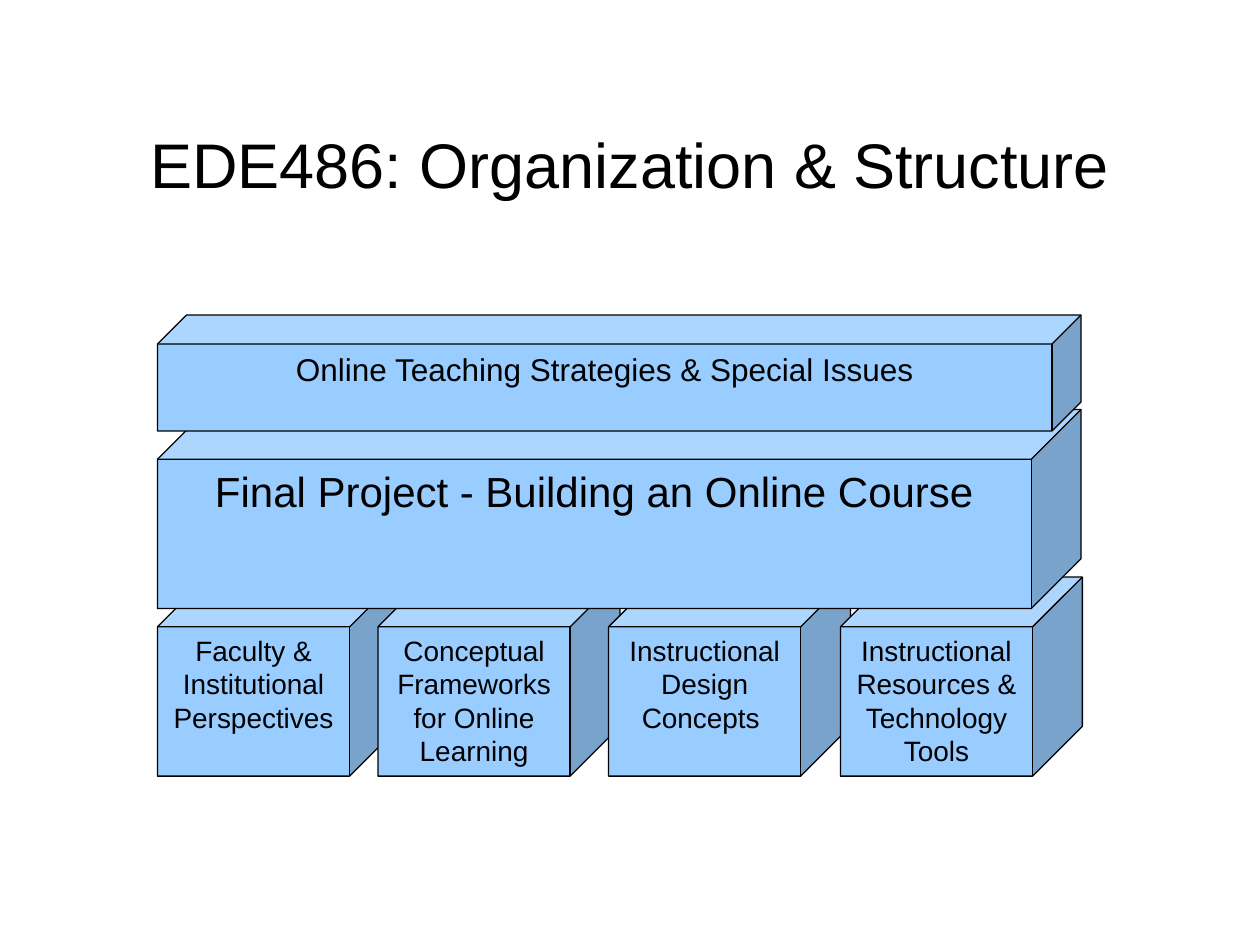
from pptx import Presentation
from pptx.dml.color import RGBColor
from pptx.enum.shapes import MSO_SHAPE as SHAPE
from pptx.enum.text import MSO_ANCHOR as ANCHOR, PP_ALIGN as ALIGN
from pptx.util import Inches, Pt

TITLE = "EDE486: Organization & Structure"
FOUNDATIONS = [  # left edge, label
    (1.25, "Faculty & Institutional Perspectives "),
    (3.0, "Conceptual Frameworks for Online Learning"),
    (4.83, "Instructional Design Concepts "),
    (6.67, "Instructional Resources & Technology Tools"),
]
LAYERS = [  # top, height, label, text size; lower layer first
    (3.25, 1.58, "Final Project - Building an Online Course", 24),
    (2.5, 0.92, "Online Teaching Strategies & Special Issues", 18),
]
COLORS = {"block": "99CCFF", "ink": "000000"}
LEFT, FULL_W = 1.25, 7.33
BASE_TOP, BASE_W, BASE_H = 4.58, 1.92, 1.58


def color(name):
    return RGBColor.from_string(COLORS[name])


def write(shape, text, size, anchor=ANCHOR.TOP):
    tf = shape.text_frame
    tf.word_wrap = True
    tf.vertical_anchor = anchor
    p = tf.paragraphs[0]
    p.alignment = ALIGN.CENTER
    r = p.add_run()
    r.text = text
    r.font.name = "Arial"
    r.font.size = Pt(size)
    r.font.color.rgb = color("ink")


def add_block(shapes, left, top, width, height, text, size=16):
    sp = shapes.add_shape(SHAPE.CUBE, *map(Inches, (left, top, width, height)))
    sp.shadow.inherit = False
    sp.fill.solid()
    sp.fill.fore_color.rgb = color("block")
    sp.line.color.rgb = color("ink")
    sp.line.width = Pt(0.75)
    write(sp, text, size)


def main():
    prs = Presentation()
    prs.slide_width, prs.slide_height = Inches(10), Inches(7.5)
    s = prs.slides.add_slide(prs.slide_layouts[6])

    title = s.shapes.add_textbox(*map(Inches, (0.75, 0.67, 8.5, 1.25)))
    write(title, TITLE, 36, ANCHOR.MIDDLE)

    blocks = s.shapes.add_group_shape().shapes
    for left, text in FOUNDATIONS:
        add_block(blocks, left, BASE_TOP, BASE_W, BASE_H, text)
    for top, height, text, size in LAYERS:
        add_block(blocks, LEFT, top, FULL_W, height, text, size)

    prs.save("out.pptx")


if __name__ == "__main__":
    main()
